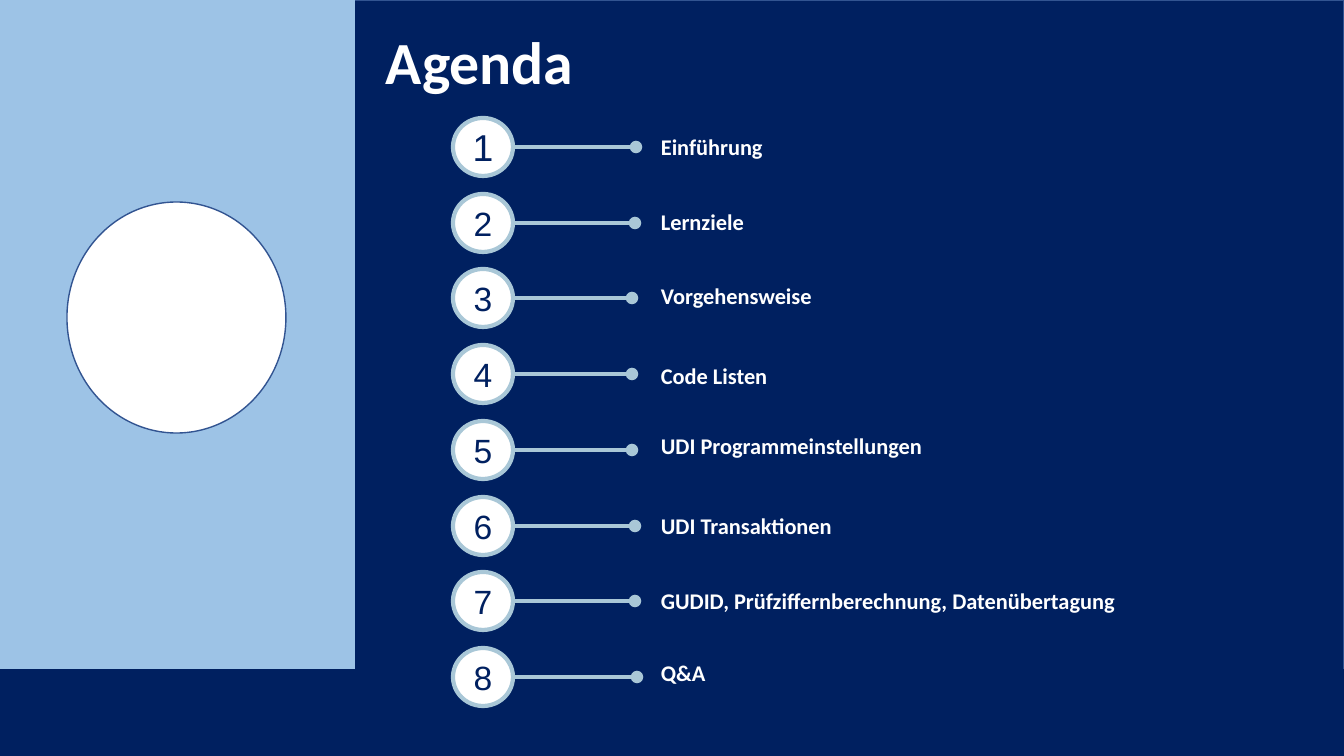
import pptx
import pptx.dml.color
import pptx.enum.shapes
import pptx.enum.text
import pptx.oxml
import pptx.oxml.ns
import pptx.util

SCALE = 914400 / 100.8
NAVY = "002060"
SKY = "9DC3E6"
MIST = "A9C7D7"
WHITE = "FFFFFF"
OUTLINE = "325491"
SHAPES = pptx.enum.shapes.MSO_SHAPE

FIRST_CENTER, LAST_CENTER = 147, 677
CIRCLE_LEFT, CIRCLE_WIDTH, CIRCLE_HEIGHT = 453, 60, 58
LABEL_LEFT = 651

AGENDA = [
    ("Einführung", 131, 636),
    ("Lernziele", 206, 635),
    ("Vorgehensweise", 280, 632),
    ("Code Listen", 360, 632),
    ("UDI Programmeinstellungen", 430, 632),
    ("UDI Transaktionen", 510, 635),
    ("GUDID, Prüfziffernberechnung, Datenübertagung", 585, 635),
    ("Q&A", 657, 637),
]


def px(length):
    return pptx.util.Emu(round(length * SCALE))


def color(value):
    return pptx.dml.color.RGBColor.from_string(value)


def add_panel(page, kind, left, top, width, height, fill, line, weight=1):
    shape = page.shapes.add_shape(kind, px(left), px(top), px(width), px(height))
    shape.shadow.inherit = False
    shape.fill.solid()
    shape.fill.fore_color.rgb = color(fill)
    shape.line.color.rgb = color(line)
    shape.line.width = pptx.util.Pt(weight)
    return shape


def add_span(para, text, size, font, fill, bold=False):
    span = para.add_run()
    span.text = text
    span.font.size = pptx.util.Pt(size)
    span.font.name = font
    span.font.bold = bold
    span.font.color.rgb = color(fill)


def add_text(page, text, left, top, width, height, size):
    box = page.shapes.add_textbox(px(left), px(top), px(width), px(height))
    box.text_frame.word_wrap = True
    para = box.text_frame.paragraphs[0]
    para.line_spacing = 0.9
    add_span(para, text, size, "Calibri", WHITE, True)


def add_number(page, number, center):
    circle = add_panel(page, SHAPES.OVAL, CIRCLE_LEFT, center - CIRCLE_HEIGHT // 2,
                       CIRCLE_WIDTH, CIRCLE_HEIGHT, WHITE, MIST, 3)
    frame = circle.text_frame
    frame.margin_left = frame.margin_right = 0
    frame.vertical_anchor = pptx.enum.text.MSO_ANCHOR.MIDDLE
    para = frame.paragraphs[0]
    para.alignment = pptx.enum.text.PP_ALIGN.CENTER
    add_span(para, str(number), 26.7 if number == 1 else 24, "Arial", NAVY)


def add_pointer(page, center, end):
    pointer = page.shapes.add_connector(
        pptx.enum.shapes.MSO_CONNECTOR.STRAIGHT,
        px(CIRCLE_LEFT + CIRCLE_WIDTH), px(center), px(end), px(center))
    pointer.line.color.rgb = color(MIST)
    pointer.line.width = pptx.util.Pt(3)
    tail = pptx.oxml.parse_xml(
        '<a:tailEnd %s type="oval"/>' % pptx.oxml.ns.nsdecls("a"))
    pointer.line._get_or_add_ln().append(tail)
    pointer._element.spPr.append(
        pptx.oxml.parse_xml("<a:effectLst %s/>" % pptx.oxml.ns.nsdecls("a")))


def add_agenda(page):
    pitch = (LAST_CENTER - FIRST_CENTER) / (len(AGENDA) - 1)
    for index, (label, label_top, pointer_end) in enumerate(AGENDA):
        center = round(FIRST_CENTER + index * pitch)
        add_number(page, index + 1, center)
        add_pointer(page, center, pointer_end)
        add_text(page, label, LABEL_LEFT, label_top, 663, 39, 16)


def main():
    deck = pptx.Presentation()
    deck.slide_width, deck.slide_height = px(1344), px(756)
    page = deck.slides.add_slide(deck.slide_layouts[6])
    add_panel(page, SHAPES.RECTANGLE, 8, 0, 1336, 756, NAVY, OUTLINE)
    add_panel(page, SHAPES.RECTANGLE, 0, 0, 354, 756, SKY, SKY)
    add_panel(page, SHAPES.RECTANGLE, 0, 670, 1344, 86, NAVY, NAVY)
    add_panel(page, SHAPES.OVAL, 67, 202, 219, 231, WHITE, OUTLINE)
    add_text(page, "Agenda", 376, 28, 807, 74, 42.7)
    add_agenda(page)
    deck.save("out.pptx")


if __name__ == "__main__":
    main()
